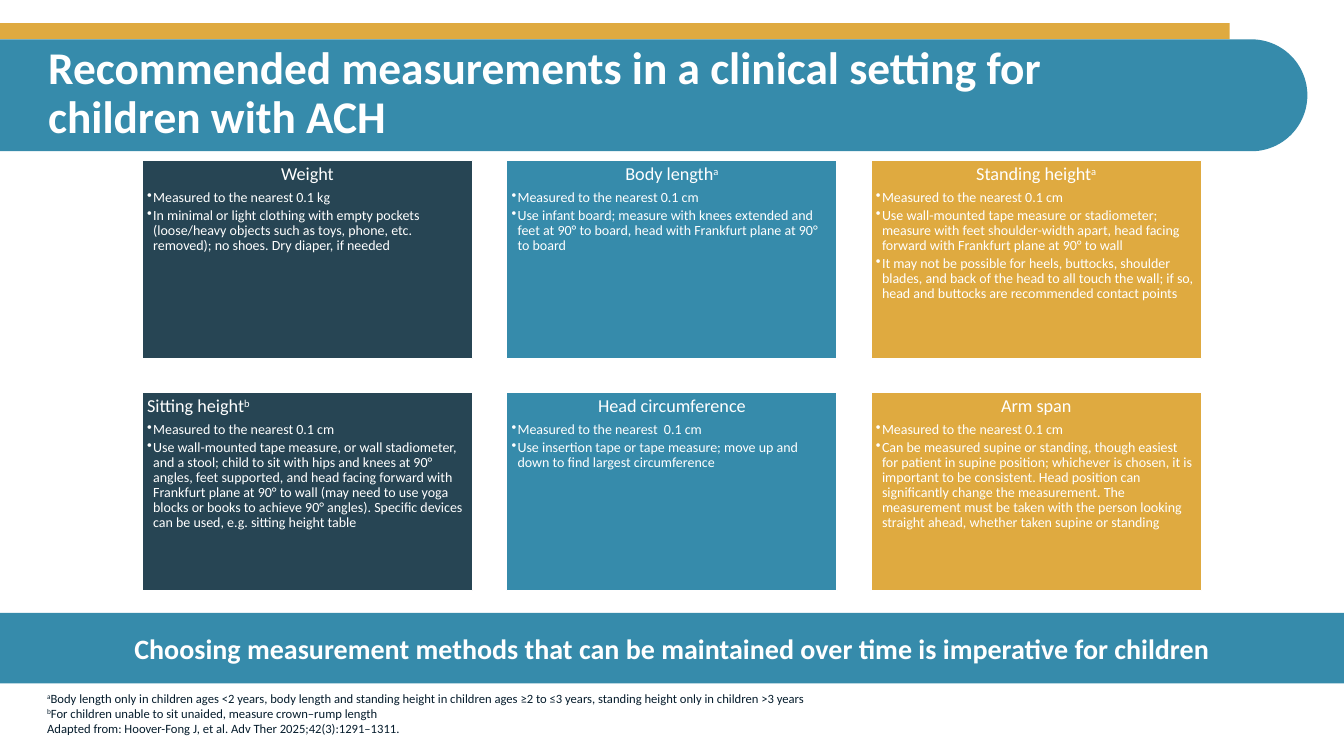
from pptx import Presentation
from pptx.dml.color import RGBColor
from pptx.enum.shapes import MSO_SHAPE
from pptx.enum.text import MSO_ANCHOR, PP_ALIGN
from pptx.oxml.ns import qn
from pptx.util import Inches, Pt
from lxml import etree

WHITE = RGBColor(0xFF, 0xFF, 0xFF)
NAVY = RGBColor(0x27, 0x45, 0x54)
TEAL = RGBColor(0x36, 0x8B, 0xAB)
GOLD = RGBColor(0xDF, 0xAA, 0x40)
INK = RGBColor(0x05, 0x1C, 0x2C)

RECTANGLE = MSO_SHAPE.RECTANGLE
ROUND_END = MSO_SHAPE.ROUND_2_SAME_RECTANGLE
TOP, MIDDLE, BOTTOM = MSO_ANCHOR.TOP, MSO_ANCHOR.MIDDLE, MSO_ANCHOR.BOTTOM
LEFT, CENTER = PP_ALIGN.LEFT, PP_ALIGN.CENTER

CELL = Inches(0.1)  # the slide is a grid of 133.33 columns by 75 rows
COLUMNS, ROWS = 133.33, 75
CARD_LEFT, CARD_TOP = 14.1, 15.9
CARD_WIDTH, CARD_HEIGHT = 32.8, 19.7
CARD_STEP_X, CARD_STEP_Y = 36.15, 23
CARD_COLORS = [NAVY, TEAL, GOLD]

# Text between two ^ marks is superscript.
TITLE = "Recommended measurements in a clinical setting for\nchildren with ACH"
MESSAGE = ("Choosing measurement methods that can be maintained over time "
           "is imperative for children")
FOOTNOTES = [
    "^a^Body length only in children ages <2 years, body length and standing "
    "height in children ages ≥2 to ≤3 years, standing height only in children >3 years",
    "^b^For children unable to sit unaided, measure crown–rump length",
    "Adapted from: Hoover-Fong J, et al. Adv Ther 2025;42(3):1291–1311.",
]
CARDS = [
    ("Weight", CENTER, [
        "Measured to the nearest 0.1 kg",
        "In minimal or light clothing with empty pockets (loose/heavy objects such "
        "as toys, phone, etc. removed); no shoes. Dry diaper, if needed"]),
    ("Body length^a^", CENTER, [
        "Measured to the nearest 0.1 cm",
        "Use infant board; measure with knees extended and feet at 90° to board, "
        "head with Frankfurt plane at 90° to board"]),
    ("Standing height^a^", CENTER, [
        "Measured to the nearest 0.1 cm",
        "Use wall-mounted tape measure or stadiometer; measure with feet "
        "shoulder-width apart, head facing forward with Frankfurt plane at 90° to wall",
        "It may not be possible for heels, buttocks, shoulder blades, and back of "
        "the head to all touch the wall; if so, head and buttocks are recommended "
        "contact points"]),
    ("Sitting height^b^", LEFT, [
        "Measured to the nearest 0.1 cm",
        "Use wall-mounted tape measure, or wall stadiometer, and a stool; child to "
        "sit with hips and knees at 90° angles, feet supported, and head facing "
        "forward with Frankfurt plane at 90° to wall (may need to use yoga blocks or "
        "books to achieve 90° angles). Specific devices can be used, e.g. sitting "
        "height table"]),
    ("Head circumference", CENTER, [
        "Measured to the nearest  0.1 cm",
        "Use insertion tape or tape measure; move up and down to find largest "
        "circumference"]),
    ("Arm span", CENTER, [
        "Measured to the nearest 0.1 cm",
        "Can be measured supine or standing, though easiest for patient in supine "
        "position; whichever is chosen, it is important to be consistent. Head "
        "position can significantly change the measurement. The measurement must be "
        "taken with the person looking straight ahead, whether taken supine or "
        "standing"]),
]


class Page:
    """Draws on one slide; lengths are columns and rows of the grid."""

    font_name = "Calibri"

    def __init__(self, slide):
        self.shapes = slide.shapes

    def shape(self, area, fill, kind=RECTANGLE, line=None):
        box = self.shapes.add_shape(kind, *[int(length * CELL) for length in area])
        box.shadow.inherit = False
        box.fill.solid()
        box.fill.fore_color.rgb = fill
        if line is None:
            box.line.fill.background()
        else:
            box.line.color.rgb = line
            box.line.width = Pt(1)
        return box

    def text_box(self, area):
        return self.shapes.add_textbox(*[int(length * CELL) for length in area])

    def frame(self, box, anchor, side=1, edge=0.5):
        """Set wrapping, anchor and insets of the text in a box."""
        values = {"word_wrap": True, "vertical_anchor": anchor,
                  "margin_left": int(side * CELL), "margin_right": int(side * CELL),
                  "margin_top": int(edge * CELL), "margin_bottom": int(edge * CELL)}
        for name, value in values.items():
            setattr(box.text_frame, name, value)

    def paragraph(self, box, text, size, color=WHITE, bold=False, bullet=False, **layout):
        frame = box.text_frame
        para = frame.paragraphs[0]
        if para.runs:
            para = frame.add_paragraph()
        if bullet:
            self.bullet(para)
        for name, value in {"alignment": LEFT, **layout}.items():
            setattr(para, name, value)
        font_values = {"name": self.font_name, "size": Pt(size), "bold": bold}
        for number, line in enumerate(text.split("\n")):
            if number:
                para.add_line_break()
            for order, part in enumerate(line.split("^")):
                if not part:
                    continue
                span = para.add_run()
                span.text = part
                for name, value in font_values.items():
                    setattr(span.font, name, value)
                span.font.color.rgb = color
                if order % 2:
                    span._r.get_or_add_rPr().set("baseline", "30000")

    def bullet(self, para):
        properties = para._p.get_or_add_pPr()
        indent = Inches(0.06)
        properties.set("marL", str(indent))
        properties.set("indent", str(-indent))
        etree.SubElement(properties, qn("a:buChar")).set("char", "•")

    def card(self, area, fill, heading, alignment, points):
        box = self.shape(area, fill, line=WHITE)
        self.frame(box, TOP, side=0.5)
        self.paragraph(box, heading, 13, alignment=alignment,
                       line_spacing=0.9, space_after=Pt(4))
        for point in points:
            self.paragraph(box, point, 10, bullet=True,
                           line_spacing=0.9, space_after=Pt(1.8))

    def header(self, title):
        self.shape((0, 2.3, 122, 1.6), GOLD)
        band = self.shape((59.3, -55.4, 11.1, 129.7), TEAL, ROUND_END)
        band.rotation = 270
        band.adjustments[0], band.adjustments[1] = 0, 0.5
        box = self.text_box((3.8, 3.9, 122, 11))
        self.frame(box, MIDDLE)
        self.paragraph(box, title, 32.4, bold=True, line_spacing=0.9)

    def message(self, text):
        box = self.shape((0, 60.8, COLUMNS, 7), TEAL)
        self.frame(box, MIDDLE, side=5.5)
        self.paragraph(box, text, 20, bold=True, alignment=CENTER)

    def footnotes(self, notes):
        box = self.text_box((3.7, 67.1, 106.7, 6.4))
        self.frame(box, BOTTOM)
        for note in notes:
            self.paragraph(box, note, 9, color=INK)


def main():
    deck = Presentation()
    deck.slide_width, deck.slide_height = int(COLUMNS * CELL), int(ROWS * CELL)
    page = Page(deck.slides.add_slide(deck.slide_layouts[6]))
    page.header(TITLE)
    for index, card in enumerate(CARDS):
        row, column = divmod(index, len(CARD_COLORS))
        area = (CARD_LEFT + column * CARD_STEP_X, CARD_TOP + row * CARD_STEP_Y,
                CARD_WIDTH, CARD_HEIGHT)
        page.card(area, CARD_COLORS[column], *card)
    page.message(MESSAGE)
    page.footnotes(FOOTNOTES)
    deck.save("out.pptx")


if __name__ == "__main__":
    main()
